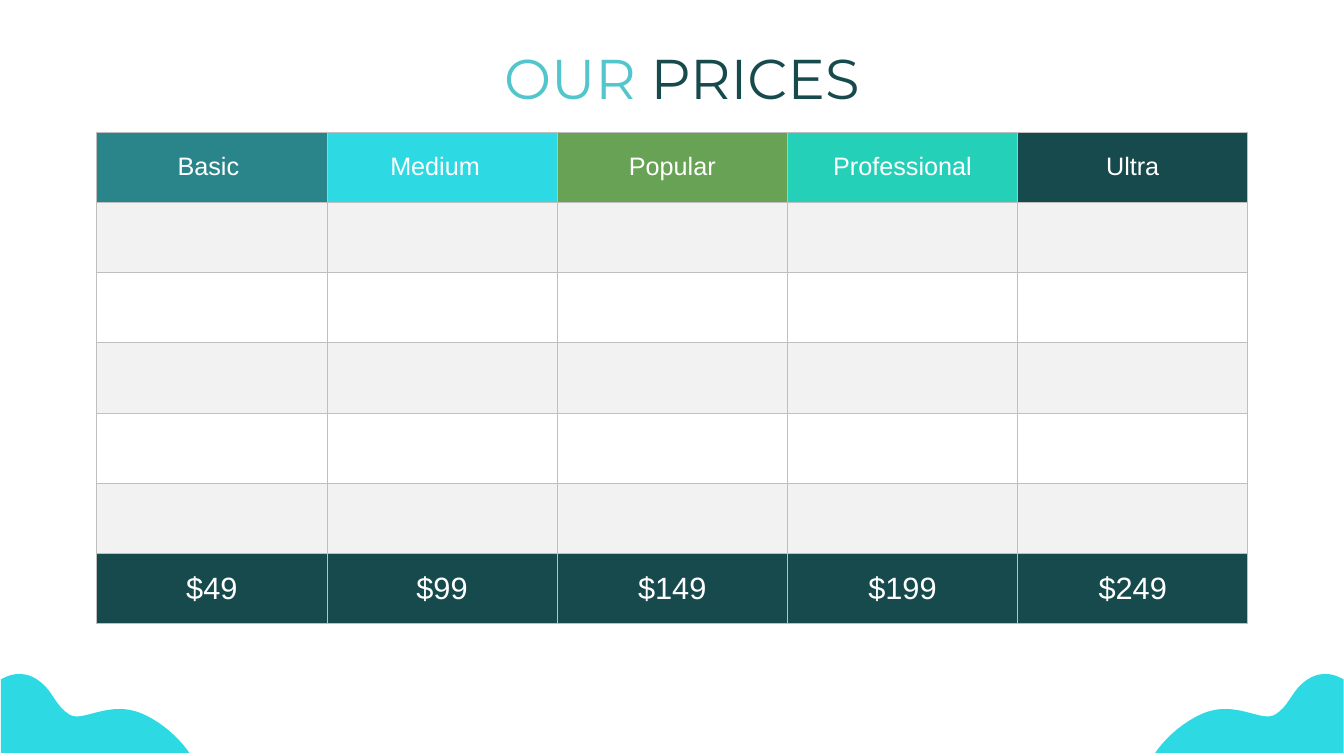
from lxml import etree
from pptx import Presentation
from pptx.dml.color import RGBColor
from pptx.enum.text import MSO_ANCHOR, MSO_AUTO_SIZE, PP_ALIGN
from pptx.oxml.ns import qn
from pptx.util import Pt

EMU_PER_PX = 9144
CENTER = PP_ALIGN.CENTER
TOP, MIDDLE = MSO_ANCHOR.TOP, MSO_ANCHOR.MIDDLE
GROW = MSO_AUTO_SIZE.SHAPE_TO_FIT_TEXT
TITLE_ONLY = 5

WHITE, GRAY, BORDER = "FFFFFF", "F2F2F2", "BFBFBF"
DARK, CYAN, SKY = "174A4D", "2DD9E2", "53C6CD"
PLANS = [
    ("Basic ", "2A858A", "$49"),
    ("Medium  ", CYAN, "$99"),
    ("Popular", "68A255", "$149"),
    ("Professional", "25D0B9", "$199"),
    ("Ultra", DARK, "$249"),
]
FEATURE_ROWS = 5
MIRROR_SUM = 1334
WAVE_CORNER = (1, 747)
WAVE_START = (1, 674)
WAVE_CURVES = [
    ((13, 667), (28, 665), (43, 679)),
    ((53, 688), (56, 701), (69, 709)),
    ((83, 717), (108, 694), (141, 708)),
    ((155, 714), (174, 727), (188, 747)),
]


def px(length):
    return round(length * EMU_PER_PX)


def color(value):
    return RGBColor.from_string(value)


class PriceSlide:
    """Holds the slide and its style, and draws each kind of element."""

    body_font = "Arial"
    title_font = "Montserrat"

    def __init__(self, presentation):
        self.slide = presentation.slides.add_slide(presentation.slide_layouts[TITLE_ONLY])

    def add_run(self, paragraph, text, font, size, fill):
        paragraph.alignment = CENTER
        run = paragraph.add_run()
        run.text = text
        run.font.name = font
        run.font.size = Pt(size)
        run.font.color.rgb = color(fill)

    def title(self, left, top, width, height, parts):
        shape = self.slide.shapes.title
        shape.left, shape.top, shape.width, shape.height = map(px, (left, top, width, height))
        frame = shape.text_frame
        frame.word_wrap = True
        frame.auto_size = GROW
        frame.vertical_anchor = TOP
        for text, fill in parts:
            self.add_run(frame.paragraphs[0], text, self.title_font, 40, fill)

    def wave(self, mirrored):
        points = [WAVE_CORNER, WAVE_START] + [p for curve in WAVE_CURVES for p in curve]
        scaled = [(px(MIRROR_SUM - x if mirrored else x), px(y)) for x, y in points]
        builder = self.slide.shapes.build_freeform(*scaled[0])
        builder.add_line_segments(scaled[1:], close=True)
        shape = builder.convert_to_shape()
        self.bend(shape)
        shape.shadow.inherit = False
        shape.fill.solid()
        shape.fill.fore_color.rgb = color(CYAN)
        shape.line.fill.background()

    def bend(self, shape):
        segments = list(shape._element.iter(qn("a:lnTo")))[1:]
        for first in range(0, len(segments), 3):
            curve = etree.Element(qn("a:cubicBezTo"))
            segments[first].addprevious(curve)
            for segment in segments[first:first + 3]:
                curve.append(segment[0])
                segment.getparent().remove(segment)

    def border(self, cell):
        properties = cell._tc.get_or_add_tcPr()
        for side in ("lnL", "lnR", "lnT", "lnB"):
            line = etree.SubElement(properties, qn(f"a:{side}"), w=str(Pt(0.75)))
            fill = etree.SubElement(line, qn("a:solidFill"))
            etree.SubElement(fill, qn("a:srgbClr"), val=BORDER)

    def cell(self, cell, fill, text="", size=18):
        self.border(cell)
        cell.fill.solid()
        cell.fill.fore_color.rgb = color(fill)
        cell.vertical_anchor = MIDDLE
        cell.margin_left = cell.margin_right = px(5)
        cell.margin_top = cell.margin_bottom = px(3)
        if text:
            self.add_run(cell.text_frame.paragraphs[0], text, self.body_font, size, WHITE)

    def price_table(self, left, top, width, height):
        price_row = FEATURE_ROWS + 1
        frame = self.slide.shapes.add_table(
            price_row + 1, len(PLANS), *map(px, (left, top, width, height)))
        table = frame.table
        table.horz_banding = False
        for column, (name, fill, price) in enumerate(PLANS):
            self.cell(table.cell(0, column), fill, name)
            for row in range(1, price_row):
                self.cell(table.cell(row, column), GRAY if row % 2 else WHITE)
            self.cell(table.cell(price_row, column), DARK, price, 22)


def main():
    presentation = Presentation()
    presentation.slide_height = px(750)
    presentation.slide_width = px(750) * 16 // 9
    page = PriceSlide(presentation)
    page.wave(mirrored=True)
    page.wave(mirrored=False)
    page.price_table(96, 131, 1142, 488)
    page.title(230, 38, 893, 77, [("OUR ", SKY), ("PRICES", DARK)])
    presentation.save("out.pptx")


if __name__ == "__main__":
    main()
